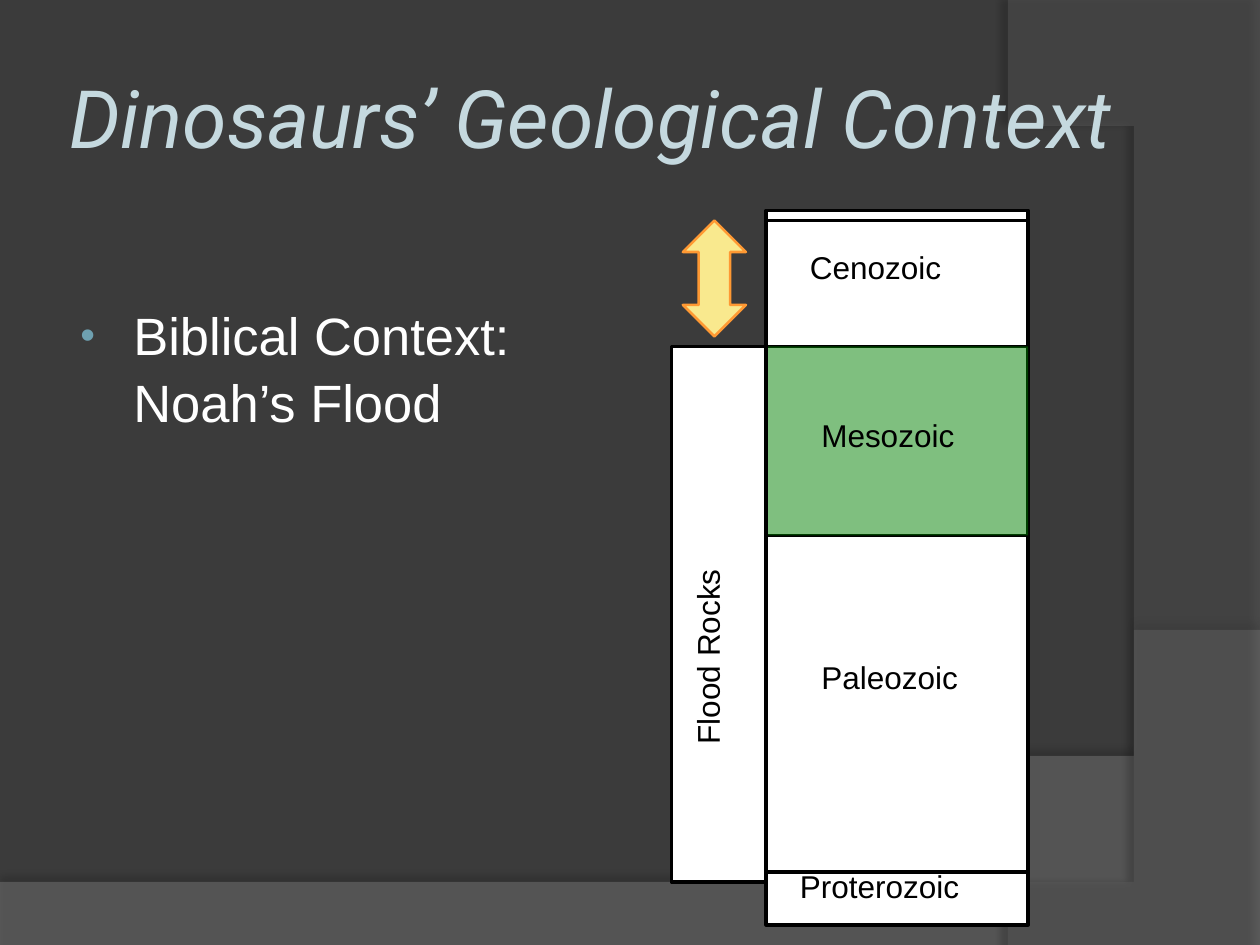
import lxml.etree
import pptx
import pptx.util
import pptx.dml.color
import pptx.enum.shapes
import pptx.enum.text
import pptx.oxml.ns
from pptx.util import Inches

SHAPE = pptx.enum.shapes.MSO_SHAPE
COLUMN_LEFT, COLUMN_WIDTH = 6.08, 2.08


def color(value):
    return pptx.dml.color.RGBColor.from_string(value)


def add_element(parent, tag, **attributes):
    element = lxml.etree.SubElement(parent, pptx.oxml.ns.qn(tag))
    for name, value in attributes.items():
        element.set(name, str(value))
    return element


def fill_shape(shape, fill, opacity=100):
    shape.shadow.inherit = False
    shape.fill.solid()
    shape.fill.fore_color.rgb = color(fill)
    if opacity < 100:
        solid_fill = shape._element.spPr.find(pptx.oxml.ns.qn("a:solidFill"))
        add_element(solid_fill[0], "a:alpha", val=opacity * 1000)


def set_line(shape, line_color, width):
    shape.line.color.rgb = color(line_color)
    shape.line.width = pptx.util.Pt(width)


def add_block(shapes, kind, box, fill, line=None, opacity=100):
    shape = shapes.add_shape(kind, *map(Inches, box))
    fill_shape(shape, fill, opacity)
    if line:
        set_line(shape, *line)
    else:
        shape.line.fill.background()
    return shape


def add_boundary(shapes, y):
    line = shapes.add_connector(
        pptx.enum.shapes.MSO_CONNECTOR.STRAIGHT,
        Inches(COLUMN_LEFT), Inches(y),
        Inches(COLUMN_LEFT + COLUMN_WIDTH), Inches(y))
    set_line(line, "000000", 2)
    add_element(line._element.spPr, "a:effectLst")


def format_text(paragraph, font, size, text_color, italic=False):
    for run in paragraph.runs:
        run.font.name = font
        run.font.size = pptx.util.Pt(size)
        run.font.color.rgb = color(text_color)
        run.font.italic = italic


def add_label(shapes, text, box, size=18, text_color="000000"):
    label = shapes.add_textbox(*map(Inches, box))
    frame = label.text_frame
    frame.word_wrap = True
    frame.text = text
    format_text(frame.paragraphs[0], "Arial", size, text_color)
    return label


def curve_points(start, control1, control2, end, steps=60):
    """Points along a cubic Bezier curve."""
    points = []
    for step in range(steps + 1):
        t = step / steps
        weights = ((1 - t) ** 3, 3 * t * (1 - t) ** 2, 3 * t ** 2 * (1 - t), t ** 3)
        corners = (start, control1, control2, end)
        points.append(tuple(sum(w * corner[axis] for w, corner in zip(weights, corners))
                            for axis in (0, 1)))
    return points


def add_swoosh(slide, position, points, fill, opacity, shadow):
    """A translucent background area, placed behind the title."""
    builder = slide.shapes.build_freeform(*points[0], scale=Inches(1))
    builder.add_line_segments(points[1:], close=True)
    shape = builder.convert_to_shape()
    fill_shape(shape, fill, opacity)
    shape.line.fill.background()
    shadow_opacity, blur, distance, angle = shadow
    effects = shape._element.spPr.find(pptx.oxml.ns.qn("a:effectLst"))
    outer = add_element(effects, "a:outerShdw", blurRad=pptx.util.Pt(blur),
                        dist=pptx.util.Pt(distance), dir=angle * 60000,
                        algn="ctr", rotWithShape=0)
    shadow_color = add_element(outer, "a:srgbClr", val="000000")
    add_element(shadow_color, "a:alpha", val=shadow_opacity * 1000)
    slide.shapes._spTree.insert(position, shape._element)


def add_background(slide):
    slide.background.fill.solid()
    slide.background.fill.fore_color.rgb = color("3B3B3B")
    bottom = curve_points((10, 5.2), (5.59, 7.29), (3.91, 7.19), (0, 7.05))
    add_swoosh(slide, 2, bottom + [(0, 7.51), (10, 7.51)], "7F7F7F", 45,
               (35, 4, 3.5, 270))
    right = curve_points((8.21, 7.5), (9.35, 6.19), (10.18, 3), (8, 0))
    add_swoosh(slide, 3, right + [(10, 0.02), (10, 7.5)], "5E5E5E", 40,
               (45, 4, 4, 180))


def set_title(slide, text):
    title = slide.shapes.title
    title.left, title.top, title.width, title.height = map(Inches, (0.5, 0.3, 8.42, 1.25))
    frame = title.text_frame
    frame.text = text
    frame.auto_size = pptx.enum.text.MSO_AUTO_SIZE.NONE
    frame.vertical_anchor = pptx.enum.text.MSO_ANCHOR.MIDDLE
    frame.margin_left = frame.margin_right = Inches(0.05)
    frame.margin_top = frame.margin_bottom = Inches(0.05)
    frame.paragraphs[0].alignment = pptx.enum.text.PP_ALIGN.LEFT
    format_text(frame.paragraphs[0], "Roboto", 46, "C5D9DF", italic=True)


def add_bullet(slide, text):
    body = add_label(slide.shapes, text, (0.5, 2.33, 4.08, 4.37), 30, "FFFFFF")
    paragraph = body.text_frame.paragraphs[0]
    paragraph.line_spacing = 1.06
    properties = paragraph._p.get_or_add_pPr()
    properties.set("marL", str(Inches(0.46)))
    properties.set("indent", str(Inches(-0.42)))
    bullet_color = add_element(properties, "a:buClr")
    add_element(bullet_color, "a:srgbClr", val="6EA0B0")
    add_element(properties, "a:buSzPct", val=80000)
    add_element(properties, "a:buFont", typeface="Arial")
    add_element(properties, "a:buChar", char="•")


def add_column(slide):
    shapes = slide.shapes.add_group_shape().shapes
    outline = ("000000", 2)
    add_block(shapes, SHAPE.RECTANGLE, (COLUMN_LEFT, 1.67, COLUMN_WIDTH, 5.67),
              "FFFFFF", outline)
    for y in (1.75, 2.75, 4.25, 6.92):
        add_boundary(shapes, y)
    # Highlighted era of the dinosaurs
    add_block(shapes, SHAPE.RECTANGLE, (COLUMN_LEFT, 2.75, COLUMN_WIDTH, 1.5),
              "008000", opacity=50)
    for era, left, top, width in (("Cenozoic", 6.33, 1.92, 1.5),
                                  ("Mesozoic", 6.42, 3.25, 1.58),
                                  ("Paleozoic", 6.42, 5.17, 1.5),
                                  ("Proterozoic", 6.25, 6.83, 1.83)):
        add_label(shapes, era, (left, top, width, 0.5))
    # Flood range beside the column
    add_block(shapes, SHAPE.RECTANGLE, (5.33, 2.75, 0.75, 4.25), "FFFFFF", outline)
    add_label(shapes, "Flood Rocks", (4.58, 4.67, 2.17, 0.5)).rotation = 270


def main():
    presentation = pptx.Presentation()
    presentation.slide_width = Inches(10)
    presentation.slide_height = Inches(7.5)
    slide = presentation.slides.add_slide(presentation.slide_layouts[5])
    add_background(slide)
    set_title(slide, "Dinosaurs’ Geological Context")
    add_bullet(slide, "Biblical Context: Noah’s Flood")
    add_column(slide)
    # Range above the flood rocks
    add_block(slide.shapes, SHAPE.UP_DOWN_ARROW, (5.42, 1.75, 0.5, 0.92),
              "F9E98E", ("FF9933", 1.5))
    presentation.save("out.pptx")


if __name__ == "__main__":
    main()
